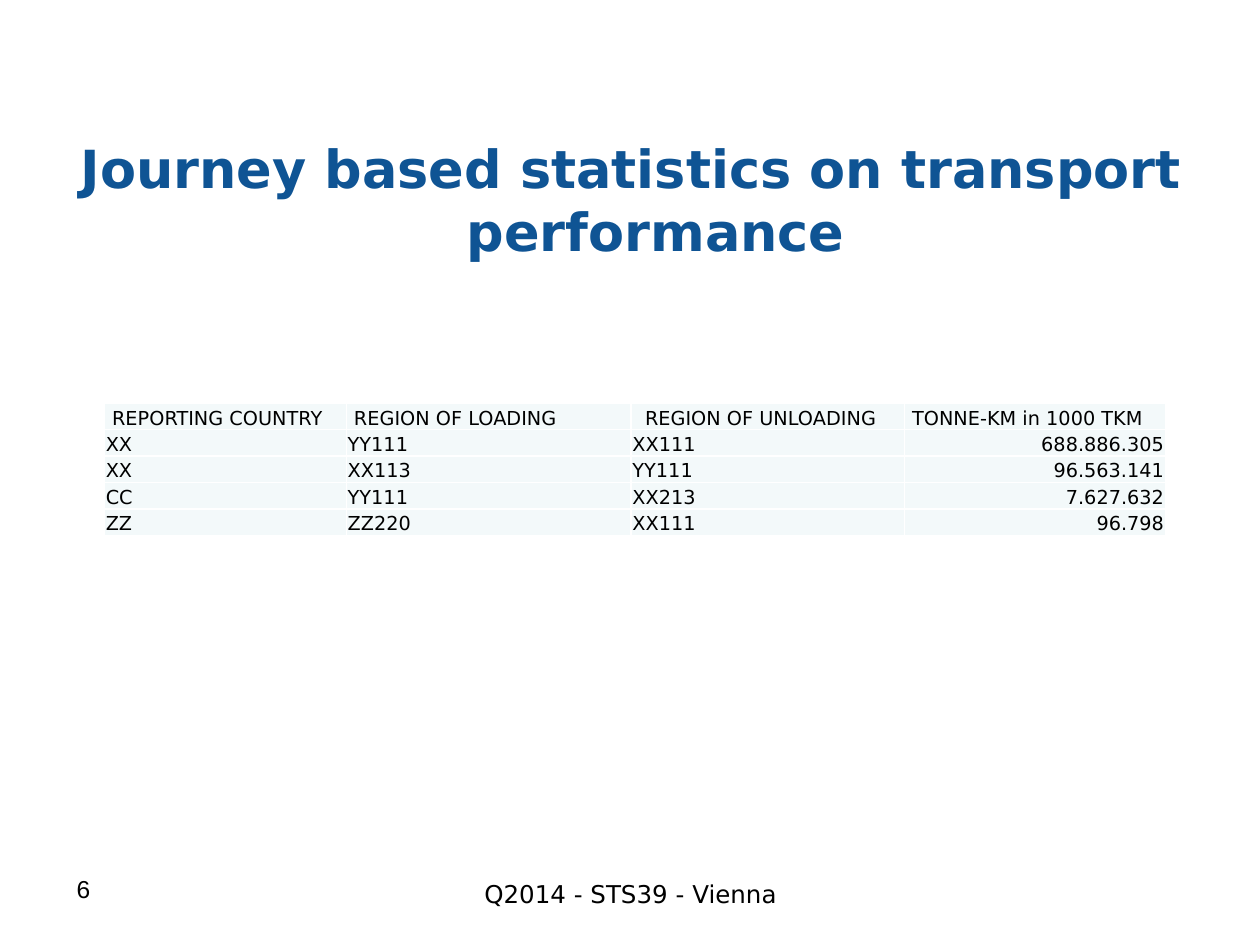
"""Build the slide on journey based transport performance statistics."""
import pptx
import pptx.util
import pptx.dml.color
import pptx.enum.text
import pptx.oxml
from dataclasses import dataclass
from pptx.util import Inches


@dataclass(frozen=True)
class Theme:
    sans: str = "DejaVu Sans"
    number_font: str = "Arial"
    title_color: str = "0F5494"
    text_color: str = "000000"
    cell_fill: str = "F3F9FA"
    border: str = "FFFFFF"
    title_size: int = 30
    footer_size: int = 14
    table_size: int = 11


theme = Theme()
align = pptx.enum.text.PP_ALIGN
anchor = pptx.enum.text.MSO_ANCHOR


def write(para, text, size, color=theme.text_color, font=theme.sans, bold=False):
    span = para.add_run()
    span.text = text
    span.font.name = font
    span.font.size = pptx.util.Pt(size)
    span.font.bold = bold
    span.font.color.rgb = pptx.dml.color.RGBColor.from_string(color)


def add_borders(cell):
    properties = cell._tc.get_or_add_tcPr()
    for position, side in enumerate(("lnL", "lnR", "lnT", "lnB")):
        line = pptx.oxml.parse_xml(
            f'<a:{side} xmlns:a="http://schemas.openxmlformats.org/drawingml/2006/main" w="12700">'
            f'<a:solidFill><a:srgbClr val="{theme.border}"/></a:solidFill></a:{side}>'
        )
        properties.insert(position, line)


deck = pptx.Presentation()
deck.slide_width, deck.slide_height = Inches(10), Inches(7.5)
page = deck.slides.add_slide(deck.slide_layouts[5])

title = page.shapes.title
title.left, title.top = Inches(0.51), Inches(1.07)
title.width, title.height = Inches(9), Inches(1.02)
title.text_frame.auto_size = pptx.enum.text.MSO_AUTO_SIZE.NONE
title.text_frame.vertical_anchor = anchor.MIDDLE
para = title.text_frame.paragraphs[0]
para.alignment = align.CENTER
indent = Inches(0.39)
para._p.get_or_add_pPr().set("marL", str(indent))
para._p.get_or_add_pPr().set("indent", str(-indent))
write(para, "Journey based statistics on transport performance",
      theme.title_size, theme.title_color, bold=True)

footers = [
    ("Q2014 - STS39 - Vienna", 3.42, 6.93, 3.17, align.CENTER, theme.sans),
    ("6", 0.51, 6.89, 2.33, align.LEFT, theme.number_font),
]
for text, left, top, width, alignment, font in footers:
    box = page.shapes.add_textbox(Inches(left), Inches(top), Inches(width), Inches(0.52))
    box.text_frame.word_wrap = True
    para = box.text_frame.paragraphs[0]
    para.alignment = alignment
    write(para, text, theme.footer_size, font=font)

rows = [
    ("REPORTING COUNTRY", "REGION OF LOADING", "REGION OF UNLOADING", "TONNE-KM in 1000 TKM"),
    ("XX", "YY111", "XX111", "688.886.305"),
    ("XX", "XX113", "YY111", "96.563.141"),
    ("CC", "YY111", "XX213", "7.627.632"),
    ("ZZ", "ZZ220", "XX111", "96.798"),
]
column_widths = [1.92, 2.26, 2.17, 2.07]
header_insets = [0.06, 0.06, 0.11, 0.06]
row_height = 0.21
table = page.shapes.add_table(
    len(rows), len(column_widths), Inches(0.83), Inches(3.2),
    Inches(sum(column_widths)), Inches(row_height * len(rows))
).table
for column, width in zip(table.columns, column_widths):
    column.width = Inches(width)
for row_index, values in enumerate(rows):
    table.rows[row_index].height = Inches(row_height)
    for column_index, text in enumerate(values):
        is_header = row_index == 0
        cell = table.cell(row_index, column_index)
        cell.fill.solid()
        cell.fill.fore_color.rgb = pptx.dml.color.RGBColor.from_string(theme.cell_fill)
        add_borders(cell)
        cell.vertical_anchor = anchor.BOTTOM
        cell.margin_left = Inches(header_insets[column_index] if is_header else 0.01)
        cell.margin_right = cell.margin_top = Inches(0.01)
        cell.margin_bottom = 0
        para = cell.text_frame.paragraphs[0]
        is_amount = column_index == len(values) - 1 and not is_header
        para.alignment = align.RIGHT if is_amount else align.LEFT
        write(para, text, theme.table_size)

deck.save("out.pptx")
